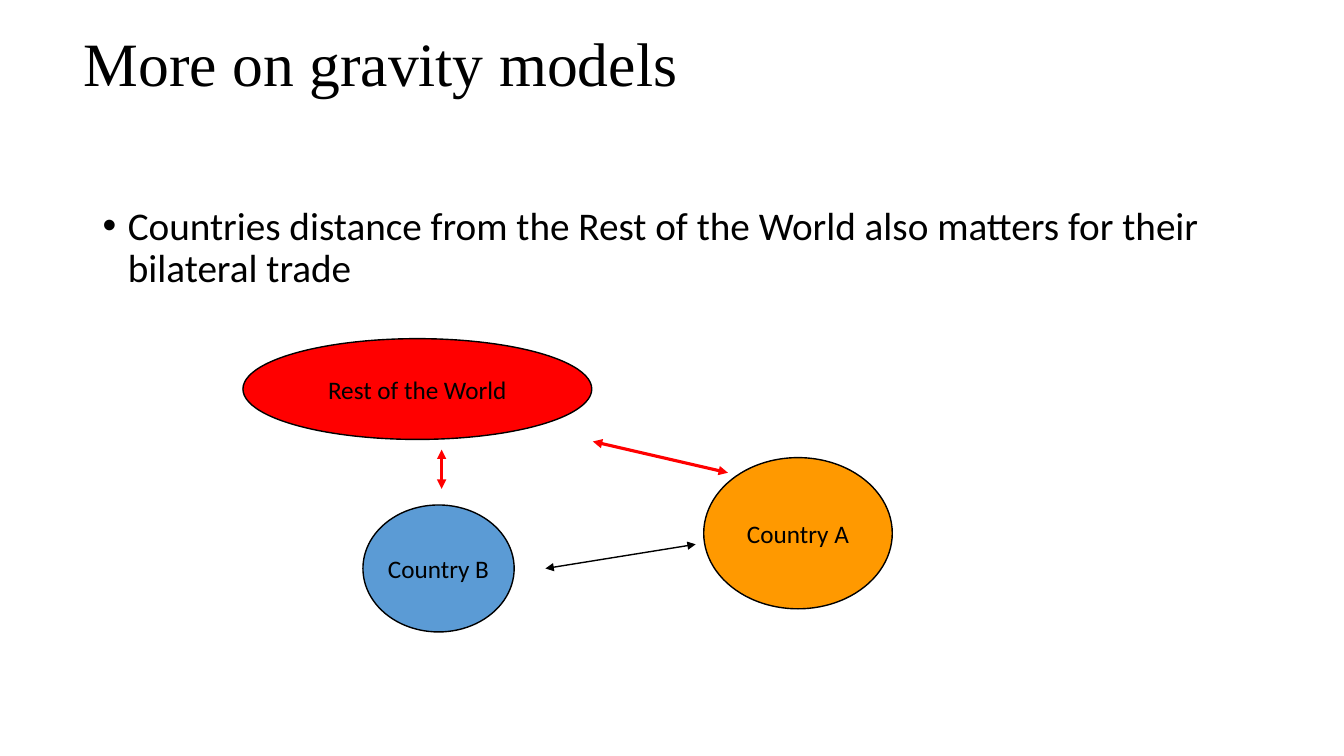
from lxml import etree
from pptx import Presentation
from pptx.dml.color import RGBColor
from pptx.enum.shapes import MSO_CONNECTOR, MSO_SHAPE
from pptx.enum.text import MSO_ANCHOR, PP_ALIGN
from pptx.oxml.ns import qn
from pptx.util import Inches, Pt

OVAL = MSO_SHAPE.OVAL
LINE = MSO_CONNECTOR.STRAIGHT
TOP, MIDDLE = MSO_ANCHOR.TOP, MSO_ANCHOR.MIDDLE
CENTER = PP_ALIGN.CENTER
BLACK, RED, ORANGE, BLUE = "000000", "FF0000", "FF9900", "5B9BD5"


def color(code):
    return RGBColor.from_string(code)


def assign(target, values):
    for name, value in values.items():
        setattr(target, name, value)


class Board:
    """Holds the text style and the current slide."""

    def __init__(self, slide, font="Calibri", ink=BLACK):
        self.shapes = slide.shapes
        self.font = font
        self.ink = ink

    def label(self, frame, text, size, font=None, layout=None):
        para = frame.paragraphs[0]
        assign(para, layout or {})
        run = para.add_run()
        run.text = text
        assign(run.font, {"size": Pt(size), "name": font or self.font})
        run.font.color.rgb = color(self.ink)
        return para

    def text(self, box, text, size, anchor=TOP, font=None, layout=None):
        frame = self.shapes.add_textbox(*map(Inches, box)).text_frame
        assign(frame, {"word_wrap": True, "vertical_anchor": anchor})
        return self.label(frame, text, size, font, layout)

    def bullet(self, box, text, size):
        para = self.text(box, text, size,
                         layout={"line_spacing": 0.9, "space_before": Pt(10)})
        props = para._p.get_or_add_pPr()
        props.set("marL", str(Inches(0.25)))
        props.set("indent", str(Inches(-0.25)))
        etree.SubElement(props, qn("a:buFont")).set("typeface", "Arial")
        etree.SubElement(props, qn("a:buChar")).set("char", "•")

    def oval(self, box, text, fill):
        shape = self.shapes.add_shape(OVAL, *map(Inches, box))
        shape.shadow.inherit = False
        shape.fill.solid()
        shape.fill.fore_color.rgb = color(fill)
        shape.line.color.rgb = color(BLACK)
        shape.line.width = Pt(1)
        frame = shape.text_frame
        assign(frame, {"word_wrap": False, "vertical_anchor": MIDDLE})
        self.label(frame, text, 18, layout={"alignment": CENTER})

    def arrow(self, start, end, ink, width):
        link = self.shapes.add_connector(LINE, *map(Inches, start + end))
        link.line.color.rgb = color(ink)
        link.line.width = Pt(width)
        props = link._element.spPr
        for tip in ("a:headEnd", "a:tailEnd"):
            etree.SubElement(props.find(qn("a:ln")), qn(tip)).set("type", "triangle")
        etree.SubElement(props, qn("a:effectLst"))


def main():
    deck = Presentation()
    assign(deck, {"slide_width": Inches(13.33), "slide_height": Inches(7.5)})
    board = Board(deck.slides.add_slide(deck.slide_layouts[6]))

    # Title and main point
    board.text((0.73, 0.22, 11.5, 0.88), "More on gravity models", 44, MIDDLE,
               "Times New Roman", {"line_spacing": 0.9})
    board.bullet((0.92, 2, 11.5, 4.76),
                 "Countries distance from the Rest of the World also matters "
                 "for their bilateral trade", 28)

    # Trading partners
    for box, name, fill in (
        ((3.6, 5.01, 1.5, 1.26), "Country B", BLUE),
        ((6.98, 4.54, 1.87, 1.5), "Country A", ORANGE),
        ((2.41, 3.36, 3.46, 1), "Rest of the World", RED),
    ):
        board.oval(box, name, fill)

    # Trade links: bilateral in black, with the rest of the world in red
    for start, end, ink, width in (
        ((5.41, 5.64), (6.9, 5.4), BLACK, 1),
        ((4.38, 4.85), (4.38, 4.46), RED, 2.25),
        ((7.22, 4.69), (5.88, 4.38), RED, 2.25),
    ):
        board.arrow(start, end, ink, width)

    deck.save("out.pptx")


if __name__ == "__main__":
    main()
